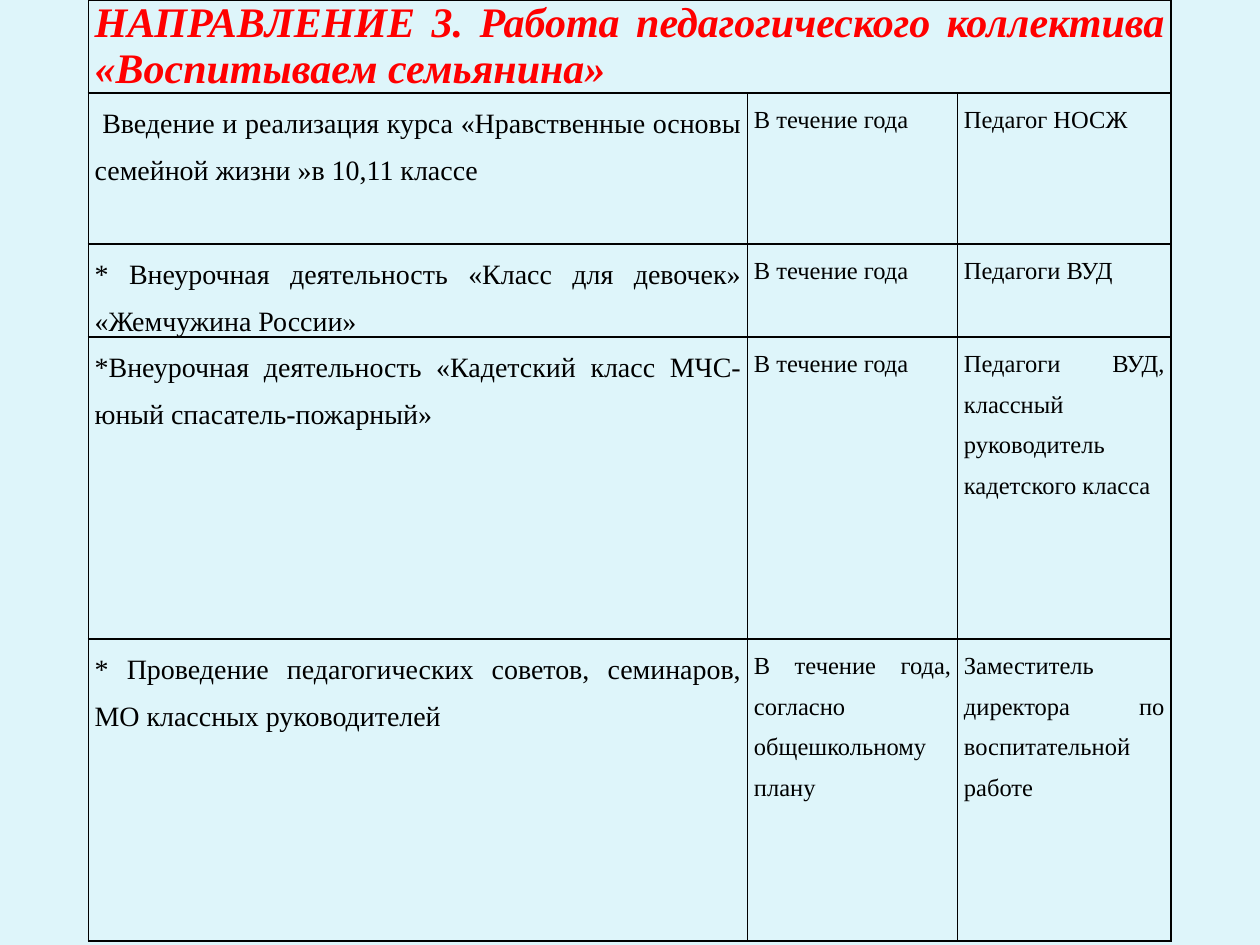
from dataclasses import dataclass

from lxml.etree import SubElement
from pptx import Presentation
from pptx.dml.color import RGBColor
from pptx.enum.text import PP_ALIGN
from pptx.oxml.ns import qn
from pptx.table import Table, _Cell
from pptx.util import Pt


@dataclass(frozen=True)
class Theme:
    back: str = "DEF5FA"
    ink: str = "000000"
    title: str = "FF0000"
    font: str = "Times New Roman"
    big: float = 24
    body: float = 16
    small: float = 14
    rule: float = 1


@dataclass(frozen=True)
class Task:
    work: str
    time: str
    who: str
    high: float


THEME = Theme()
LEFT, TOP = 50.5, 0
WIDTHS = (376.7, 120, 121.9)
HEAD_HIGH = 53.1
TITLE = "НАПРАВЛЕНИЕ 3. Работа педагогического коллектива «Воспитываем семьянина»"
TASKS = (
    Task(" Введение и реализация курса «Нравственные основы семейной жизни »в 10,11 классе",
         "В течение года", "Педагог НОСЖ", 86.3),
    Task("* Внеурочная деятельность «Класс для девочек» «Жемчужина России»",
         "В течение года", "Педагоги ВУД", 53.1),
    Task("*Внеурочная деятельность «Кадетский класс МЧС- юный спасатель-пожарный»",
         "В течение года", "Педагоги ВУД, классный руководитель кадетского класса", 172.6),
    Task("* Проведение педагогических советов, семинаров, МО классных руководителей",
         "В течение года, согласно общешкольному плану",
         "Заместитель директора по воспитательной работе", 172.6),
)

# Formats by kind of text
HEAD = {"size": Pt(THEME.big), "bold": True, "italic": True}
BODY = {"size": Pt(THEME.body), "bold": False, "italic": False}
SMALL = {**BODY, "size": Pt(THEME.small)}
INSETS = {"margin_left": Pt(3.6), "margin_right": Pt(3.6),
          "margin_top": Pt(0), "margin_bottom": Pt(0)}


def apply(item: object, form: dict) -> None:
    for name, value in form.items():
        setattr(item, name, value)


def frame(cell: _Cell) -> None:
    """Rule all four sides and leave the cell clear."""
    props = cell._tc.get_or_add_tcPr()
    for side in ("a:lnL", "a:lnR", "a:lnT", "a:lnB"):
        line = SubElement(props, qn(side), w=str(Pt(THEME.rule)))
        fill = SubElement(line, qn("a:solidFill"))
        SubElement(fill, qn("a:srgbClr"), val=THEME.ink)
    cell.fill.background()


def write(cell: _Cell, text: str, form: dict, color: str, gap: float) -> None:
    para = cell.text_frame.paragraphs[0]
    apply(para, {"alignment": PP_ALIGN.JUSTIFY, "line_spacing": gap})
    run = para.add_run()
    run.text = text
    apply(run.font, {"name": THEME.font, **form})
    run.font.color.rgb = RGBColor.from_string(color)


def fill_rows(table: Table) -> None:
    for row, task in enumerate(TASKS, 1):
        texts = (task.work, task.time, task.who)
        for col, (text, form) in enumerate(zip(texts, (BODY, SMALL, SMALL))):
            write(table.cell(row, col), text, form, THEME.ink, 1.5)


def main() -> None:
    deck = Presentation()
    apply(deck, {"slide_width": Pt(720), "slide_height": Pt(540)})
    slide = deck.slides.add_slide(deck.slide_layouts[6])
    back = slide.background.fill
    back.solid()
    back.fore_color.rgb = RGBColor.from_string(THEME.back)

    # Table grid
    highs = [HEAD_HIGH] + [task.high for task in TASKS]
    table = slide.shapes.add_table(
        len(highs), len(WIDTHS), Pt(LEFT), Pt(TOP),
        Pt(sum(WIDTHS)), Pt(sum(highs))).table
    apply(table, {"first_row": False, "horz_banding": False})
    for col, wide in zip(table.columns, WIDTHS):
        col.width = Pt(wide)
    for row, high in zip(table.rows, highs):
        row.height = Pt(high)
    for cell in table.iter_cells():
        apply(cell, INSETS)
        frame(cell)

    # Heading and tasks
    table.cell(0, 0).merge(table.cell(0, len(WIDTHS) - 1))
    write(table.cell(0, 0), TITLE, HEAD, THEME.title, 1.0)
    fill_rows(table)
    deck.save("out.pptx")


if __name__ == "__main__":
    main()
